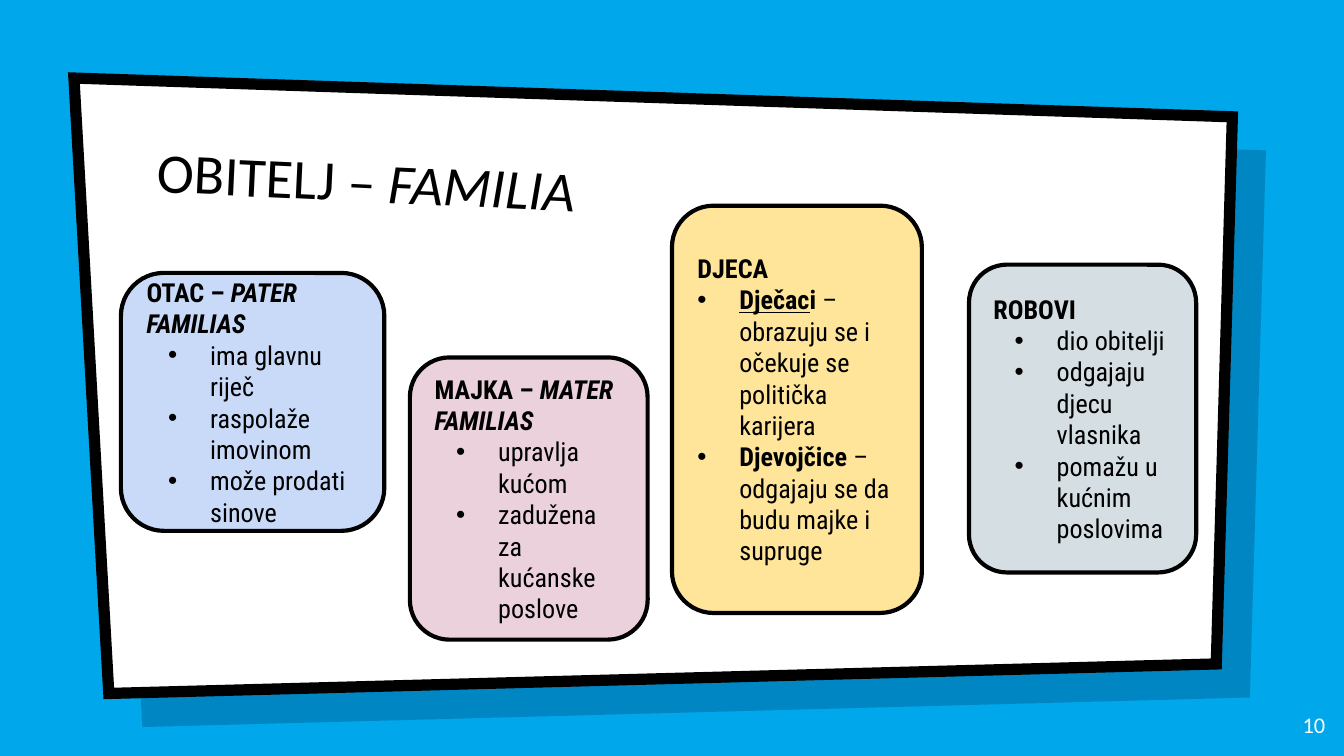
import dataclasses
import typing

import pptx
import pptx.dml.color
import pptx.enum.shapes
import pptx.enum.text
import pptx.oxml
import pptx.oxml.ns
import pptx.util

Pt = pptx.util.Pt
RGBColor = pptx.dml.color.RGBColor
Align = pptx.enum.text.PP_ALIGN
Anchor = pptx.enum.text.MSO_ANCHOR

SKY = RGBColor(0x00, 0xA7, 0xEB)
NAVY = RGBColor(0x00, 0x19, 0x36)
WHITE = RGBColor(0xFF, 0xFF, 0xFF)
BLACK = RGBColor(0x00, 0x00, 0x00)
BLUE = RGBColor(0xC9, 0xDA, 0xF8)
PINK = RGBColor(0xEA, 0xD1, 0xDC)
YELLOW = RGBColor(0xFF, 0xE5, 0x99)
GREY = RGBColor(0xD5, 0xDE, 0xE2)

PANEL = [(39.6, 41.8), (660.2, 62.6), (651.6, 355.7), (58.3, 371.5)]
SHADOW_OFFSET = 18
INSET = 7.2
HANGING = 22.5
BOLD = {"bold": True}
BOLD_ITALIC = {"bold": True, "italic": True}
UNDERLINED = {"bold": True, "underline": True}


class Span(typing.NamedTuple):
    text: str
    format: dict[str, bool] = {}


@dataclasses.dataclass
class Card:
    left: float
    top: float
    width: float
    height: float
    color: RGBColor
    heading: list[Span]
    bullets: list[list[Span]]
    indent: float = 34


CARDS = [
    Card(64.8, 146.2, 141.1, 138.2, BLUE,
         [Span("OTAC – ", BOLD), Span("PATER FAMILIAS", BOLD_ITALIC)],
         [[Span("ima glavnu riječ")], [Span("raspolaže imovinom")],
          [Span("može prodati sinove")]]),
    Card(219.6, 191.5, 127.4, 151.2, PINK,
         [Span("MAJKA – ", BOLD), Span("MATER FAMILIAS", BOLD_ITALIC)],
         [[Span("upravlja kućom")], [Span("zadužena za kućanske poslove")]]),
    Card(360, 110.2, 133.9, 218.2, YELLOW,
         [Span("DJECA", BOLD)],
         [[Span("Dječac", UNDERLINED), Span("i ", BOLD),
           Span("– obrazuju se i očekuje se politička karijera")],
          [Span("Djevojčice ", BOLD),
           Span("– odgajaju se da budu majke i supruge")]],
         HANGING),
    Card(519.1, 141.8, 121.7, 164.9, GREY,
         [Span("ROBOVI", BOLD)],
         [[Span("dio obitelji")], [Span("odgajaju djecu vlasnika")],
          [Span("pomažu u kućnim poslovima")]]),
]


def add_child(parent: typing.Any, xml: str) -> None:
    tag, rest = xml.split(" ", 1)
    namespace = pptx.oxml.ns.nsdecls("a")
    parent.append(pptx.oxml.parse_xml(f"<{tag} {namespace} {rest}"))


def set_frame(frame: typing.Any, anchor: Anchor) -> None:
    values = {"word_wrap": True, "vertical_anchor": anchor}
    for side in ("left", "top", "right", "bottom"):
        values[f"margin_{side}"] = Pt(INSET)
    for name, value in values.items():
        setattr(frame, name, value)


def write(para: typing.Any, spans: list[Span], font: str, size: float,
          color: RGBColor, align: Align = Align.LEFT) -> None:
    para.alignment = align
    for span in spans:
        run = para.add_run()
        run.text = span.text
        run.font.color.rgb = color
        for name, value in {"name": font, "size": Pt(size), **span.format}.items():
            setattr(run.font, name, value)


def add_bullet(para: typing.Any, indent: float) -> None:
    properties = para._p.get_or_add_pPr()
    properties.set("marL", str(Pt(indent)))
    properties.set("indent", str(-Pt(HANGING)))
    add_child(properties, f'a:buClr ><a:srgbClr val="{BLACK}"/></a:buClr>')
    add_child(properties, 'a:buFont typeface="Arial"/>')
    add_child(properties, 'a:buChar char="•"/>')


def add_panel(page: typing.Any, offset: float, color: RGBColor) -> typing.Any:
    corners = [(Pt(x + offset), Pt(y + offset)) for x, y in PANEL]
    builder = page.shapes.build_freeform(*corners[0])
    builder.add_line_segments(corners[1:], close=True)
    panel = builder.convert_to_shape()
    panel.shadow.inherit = False
    panel.fill.solid()
    panel.fill.fore_color.rgb = color
    return panel


def set_line(shape: typing.Any, width: float) -> None:
    shape.line.color.rgb = BLACK
    shape.line.width = Pt(width)


def add_text(page: typing.Any, bounds: tuple[float, ...], spans: list[Span],
             size: float, color: RGBColor, anchor: Anchor, align: Align) -> typing.Any:
    box = page.shapes.add_textbox(*map(Pt, bounds))
    set_frame(box.text_frame, anchor)
    write(box.text_frame.paragraphs[0], spans, "Calibri", size, color, align)
    return box


def add_card(page: typing.Any, card: Card) -> None:
    box = page.shapes.add_shape(
        pptx.enum.shapes.MSO_SHAPE.ROUNDED_RECTANGLE,
        Pt(card.left), Pt(card.top), Pt(card.width), Pt(card.height))
    box.shadow.inherit = False
    box.fill.solid()
    box.fill.fore_color.rgb = card.color
    set_line(box, 2.25)
    frame = box.text_frame
    set_frame(frame, Anchor.MIDDLE)
    write(frame.paragraphs[0], card.heading, "Roboto Condensed", 14, BLACK)
    for spans in card.bullets:
        para = frame.add_paragraph()
        add_bullet(para, card.indent)
        write(para, spans, "Roboto Condensed", 14, BLACK)


def main() -> None:
    deck = pptx.Presentation()
    deck.slide_width, deck.slide_height = Pt(720), Pt(405)
    page = deck.slides.add_slide(deck.slide_layouts[6])
    page.background.fill.solid()
    page.background.fill.fore_color.rgb = SKY

    # Tilted panel with its translucent shadow
    shade = add_panel(page, SHADOW_OFFSET, NAVY)
    shade.line.fill.background()
    shade_color = shade._element.spPr.find(".//" + pptx.oxml.ns.qn("a:srgbClr"))
    add_child(shade_color, 'a:alpha val="22000"/>')
    panel = add_panel(page, 0, WHITE)
    set_line(panel, 6)
    add_child(panel.line._get_or_add_ln(), 'a:miter lim="800000"/>')

    # Title and page number
    title = add_text(page, (77, 69.1, 553.7, 59.8),
                     [Span("OBITELJ – "), Span("FAMILIA", {"italic": True})],
                     30, BLACK, Anchor.BOTTOM, Align.LEFT)
    title.rotation = 2.7
    add_text(page, (673.9, 373.7, 43.2, 31), [Span("10")],
             12, WHITE, Anchor.TOP, Align.RIGHT)

    # Family members
    for card in CARDS:
        add_card(page, card)

    deck.save("out.pptx")


if __name__ == "__main__":
    main()
